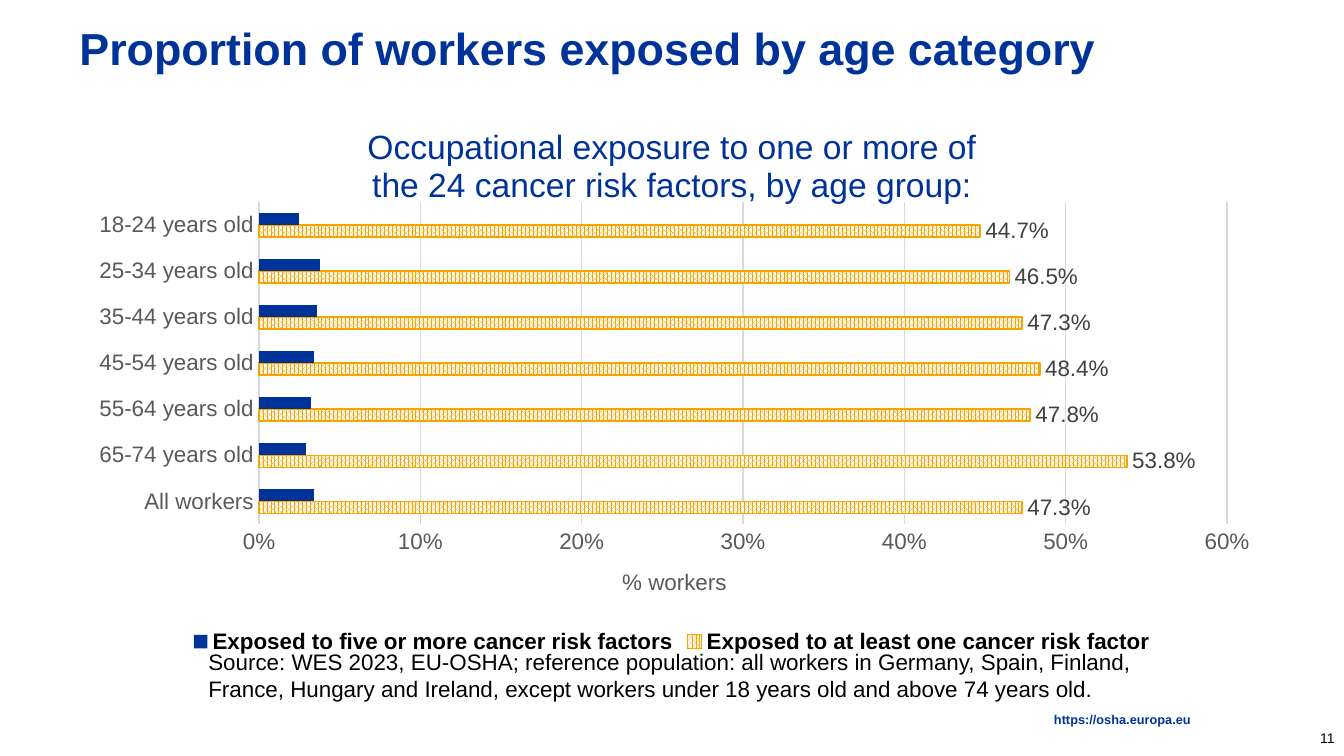
from pptx import Presentation
from pptx.chart.data import CategoryChartData
from pptx.dml.color import RGBColor
from pptx.enum import chart as ch, dml, text as tx
from pptx.oxml import parse_xml
from pptx.oxml.ns import nsdecls
from pptx.util import Pt

THEME = {
    "font": "Arial",
    "blue": "003399", "amber": "F6A400", "white": "FFFFFF", "black": "000000",
    "axis_text": "595959", "label_text": "404040", "grid": "D9D9D9",
    "title": 24, "chart_title": 18, "body": 12, "chart": 10, "number": 7.5, "link": 6.8,
}

TITLE = "Proportion of workers exposed by age category"
CHART_TITLE = ["Occupational exposure to one or more of",
               "the 24 cancer risk factors, by age group:"]
AXIS_TITLE = "% workers"
SOURCE = ("Source: WES 2023, EU-OSHA; reference population: all workers in Germany, Spain, "
          "Finland, France, Hungary and Ireland, except workers under 18 years old and "
          "above 74 years old.")
LINK = "https://osha.europa.eu"
SLIDE_NUMBER = "11"

# Age group, exposed to at least one factor, exposed to five or more (bottom to top)
EXPOSURE = [
    ("All workers", 0.473, 0.034),
    ("65-74 years old", 0.538, 0.029),
    ("55-64 years old", 0.478, 0.032),
    ("45-54 years old", 0.484, 0.034),
    ("35-44 years old", 0.473, 0.036),
    ("25-34 years old", 0.465, 0.038),
    ("18-24 years old", 0.447, 0.025),
]
SERIES = ["Exposed to at least one cancer risk factor",
          "Exposed to five or more cancer risk factors"]
PLOT = {"x": 0.155, "y": 0.177, "w": 0.809, "h": 0.581}  # shares of the chart frame


def color(name):
    return RGBColor.from_string(THEME[name])


def set_font(font, size, ink, bold=False):
    font.name, font.size, font.bold = THEME["font"], Pt(THEME[size]), bold
    font.color.rgb = color(ink)


def add_text(slide, content, box, size, ink="black", bold=False, align=tx.PP_ALIGN.LEFT,
             anchor=tx.MSO_ANCHOR.TOP, margins=(7.2, 3.6), spacing=None, grow=False):
    frame = slide.shapes.add_textbox(*map(Pt, box)).text_frame
    frame.word_wrap = True
    frame.auto_size = tx.MSO_AUTO_SIZE.SHAPE_TO_FIT_TEXT if grow else tx.MSO_AUTO_SIZE.NONE
    frame.vertical_anchor = anchor
    frame.margin_left = frame.margin_right = Pt(margins[0])
    frame.margin_top = frame.margin_bottom = Pt(margins[1])
    paragraph = frame.paragraphs[0]
    paragraph.alignment, paragraph.line_spacing = align, spacing
    run = paragraph.add_run()
    run.text = content
    set_font(run.font, size, ink, bold)


def fill_title(frame, lines, size, ink):
    for index, line in enumerate(lines):
        paragraph = frame.add_paragraph() if index else frame.paragraphs[0]
        run = paragraph.add_run()
        run.text = line
        set_font(run.font, size, ink)


def fix_plot_area(chart):
    """Pin the inner plot area, which python-pptx has no method for."""
    plot_area = chart._chartSpace.chart.plotArea
    for layout in plot_area.findall("{*}layout"):
        plot_area.remove(layout)
    modes = "".join(f'<c:{side}Mode val="edge"/>' for side in "xy")
    places = "".join(f'<c:{side} val="{share}"/>' for side, share in PLOT.items())
    plot_area.insert(0, parse_xml(
        f'<c:layout {nsdecls("c")}><c:manualLayout><c:layoutTarget val="inner"/>'
        f'{modes}{places}</c:manualLayout></c:layout>'))


def style_axes(chart):
    for axis in (chart.category_axis, chart.value_axis):
        axis.major_tick_mark = axis.minor_tick_mark = ch.XL_TICK_MARK.NONE
        set_font(axis.tick_labels.font, "body", "axis_text")
    categories, values = chart.category_axis, chart.value_axis
    values.minimum_scale, values.maximum_scale, values.major_unit = 0, 0.6, 0.1
    values.tick_labels.number_format = "0%"
    values.tick_labels.number_format_is_linked = False
    values.format.line.fill.background()
    values.has_major_gridlines = True
    for line in (categories.format.line, values.major_gridlines.format.line):
        line.color.rgb, line.width = color("grid"), Pt(0.75)
    fill_title(values.axis_title.text_frame, [AXIS_TITLE], "body", "axis_text")


def style_series(plot):
    at_least_one, five_or_more = plot.series
    fill = at_least_one.format.fill
    fill.patterned()
    fill.pattern = dml.MSO_PATTERN.PERCENT_80
    fill.fore_color.rgb, fill.back_color.rgb = color("amber"), color("white")
    line = at_least_one.format.line
    line.color.rgb, line.width = color("amber"), Pt(0.75)
    labels = at_least_one.data_labels
    labels.show_value = True
    labels.position = ch.XL_LABEL_POSITION.OUTSIDE_END
    labels.number_format, labels.number_format_is_linked = "0.0%", False
    set_font(labels.font, "body", "label_text")
    five_or_more.format.fill.solid()
    five_or_more.format.fill.fore_color.rgb = color("blue")


def add_exposure_chart(slide, box):
    groups, *columns = zip(*EXPOSURE)
    data = CategoryChartData(number_format="0.0%")
    data.categories = groups
    for name, values in zip(SERIES, columns):
        data.add_series(name, values)
    chart = slide.shapes.add_chart(
        ch.XL_CHART_TYPE.BAR_CLUSTERED, *map(Pt, box), data).chart
    set_font(chart.font, "chart", "black")
    chart.has_title = True
    fill_title(chart.chart_title.text_frame, CHART_TITLE, "chart_title", "blue")
    chart.chart_title.include_in_layout = False
    chart.has_legend = True
    chart.legend.position = ch.XL_LEGEND_POSITION.BOTTOM
    chart.legend.include_in_layout = False
    set_font(chart.legend.font, "body", "black", bold=True)
    plot = chart.plots[0]
    plot.gap_width, plot.vary_by_categories = 182, False
    style_series(plot)
    style_axes(chart)
    fix_plot_area(chart)


def main():
    presentation = Presentation()
    presentation.slide_width, presentation.slide_height = Pt(720), Pt(405)
    slide = presentation.slides.add_slide(presentation.slide_layouts[6])
    right, middle = tx.PP_ALIGN.RIGHT, tx.MSO_ANCHOR.MIDDLE
    add_text(slide, SLIDE_NUMBER, (672, 384.5, 48, 21.5), "number", align=right,
             anchor=middle, margins=(5, 3))
    add_text(slide, LINK, (178.5, 382.5, 459.5, 6.5), "link", "blue", bold=True,
             align=right, margins=(0, 0), spacing=0.9)
    add_text(slide, TITLE, (35.5, 11, 595.5, 29), "title", "blue", bold=True, anchor=middle)
    add_exposure_chart(slide, (39.5, 55.5, 641, 297.5))
    add_text(slide, SOURCE, (104.5, 343.5, 511, 36), "body", grow=True)
    presentation.save("out.pptx")


if __name__ == "__main__":
    main()
